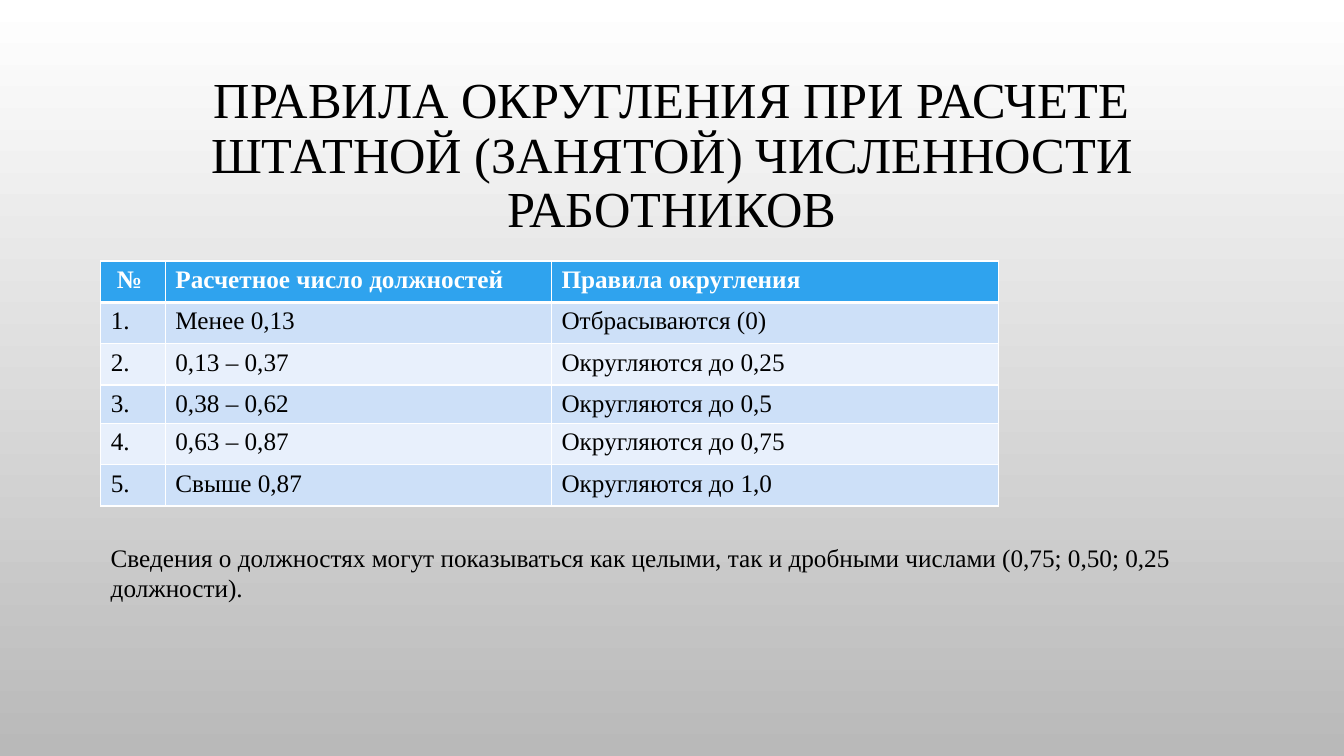
"""Build a slide with the rounding rules for staff numbers."""
from lxml import etree
from pptx import Presentation
from pptx.dml.color import RGBColor
from pptx.enum.text import MSO_ANCHOR, MSO_AUTO_SIZE, PP_ALIGN
from pptx.oxml.ns import qn
from pptx.util import Inches, Pt

CENTER, LEFT = PP_ALIGN.CENTER, PP_ALIGN.LEFT
MIDDLE, NO_FIT = MSO_ANCHOR.MIDDLE, MSO_AUTO_SIZE.NONE

THEME = {
    "font": "Times New Roman",
    "title": 36,
    "body": 18,
    "black": "000000",
    "white": "FFFFFF",
    "grey": "B9B9B9",
    "header": "2FA3EE",
    "bands": ("CDE0F8", "E8F0FC"),
}

TITLE = "ПРАВИЛА ОКРУГЛЕНИЯ ПРИ РАСЧЕТЕ ШТАТНОЙ (ЗАНЯТОЙ) ЧИСЛЕННОСТИ РАБОТНИКОВ"
ROWS = [
    ("№", "Расчетное число должностей", "Правила округления"),
    ("1.", "Менее 0,13", "Отбрасываются (0)"),
    ("2.", "0,13 – 0,37", "Округляются до 0,25"),
    ("3.", "0,38 – 0,62", "Округляются до 0,5"),
    ("4.", "0,63 – 0,87", "Округляются до 0,75"),
    ("5.", "Свыше 0,87", "Округляются до 1,0"),
]
NOTE = ("Сведения о должностях могут показываться как целыми, так и дробными "
        "числами (0,75; 0,50; 0,25 должности).")
COL_WIDTHS = (0.64, 3.83, 4.43)
ROW_HEIGHTS = (0.41, 0.41, 0.41, 0.38, 0.41, 0.41)


def write(tf, text, size, color, bold=False, align=LEFT):
    p = tf.paragraphs[0]
    p.alignment = align
    r = p.add_run()
    r.text = text
    formats = {"name": THEME["font"], "size": Pt(size), "bold": bold}
    for name, value in formats.items():
        setattr(r.font, name, value)
    r.font.color.rgb = RGBColor.from_string(color)
    return p


def add_borders(cell, bottom):
    tcPr = cell._tc.get_or_add_tcPr()
    widths = {"a:lnL": 1, "a:lnR": 1, "a:lnT": 1, "a:lnB": bottom}
    for tag, width in widths.items():
        ln = etree.SubElement(tcPr, qn(tag), w=str(Pt(width)))
        fill = etree.SubElement(ln, qn("a:solidFill"))
        etree.SubElement(fill, qn("a:srgbClr"), val=THEME["white"])


prs = Presentation()
prs.slide_width, prs.slide_height = Inches(13.33), Inches(7.5)
s = prs.slides.add_slide(prs.slide_layouts[5])

bg = s.background.fill
bg.gradient()
bg.gradient_angle = 270
for stop, color in zip(bg.gradient_stops, (THEME["white"], THEME["grey"])):
    stop.color.rgb = RGBColor.from_string(color)

title = s.shapes.title
title.left, title.top = Inches(1), Inches(0.68)
title.width, title.height = Inches(11.33), Inches(1.75)
tf = title.text_frame
for name, value in {"word_wrap": True, "auto_size": NO_FIT, "vertical_anchor": MIDDLE}.items():
    setattr(tf, name, value)
p = write(tf, TITLE, THEME["title"], THEME["black"], align=CENTER)
p.line_spacing = 0.9

table = s.shapes.add_table(len(ROWS), len(COL_WIDTHS), Inches(1), Inches(2.59),
                           Inches(sum(COL_WIDTHS)), Inches(sum(ROW_HEIGHTS))).table
for col, width in zip(table.columns, COL_WIDTHS):
    col.width = Inches(width)
for i, (texts, height) in enumerate(zip(ROWS, ROW_HEIGHTS)):
    is_header = i == 0
    table.rows[i].height = Inches(height)
    for cell, text in zip(table.rows[i].cells, texts):
        add_borders(cell, 3 if is_header else 1)
        cell.fill.solid()
        fill = THEME["header"] if is_header else THEME["bands"][(i - 1) % 2]
        cell.fill.fore_color.rgb = RGBColor.from_string(fill)
        write(cell.text_frame, text, THEME["body"],
              THEME["white"] if is_header else THEME["black"], is_header)
table.cell(0, 0).margin_left = Inches(0.16)

note = s.shapes.add_textbox(Inches(1), Inches(5.33), Inches(11.06), Inches(0.71))
note.text_frame.word_wrap = True
write(note.text_frame, NOTE, THEME["body"], THEME["black"])

prs.save("out.pptx")
